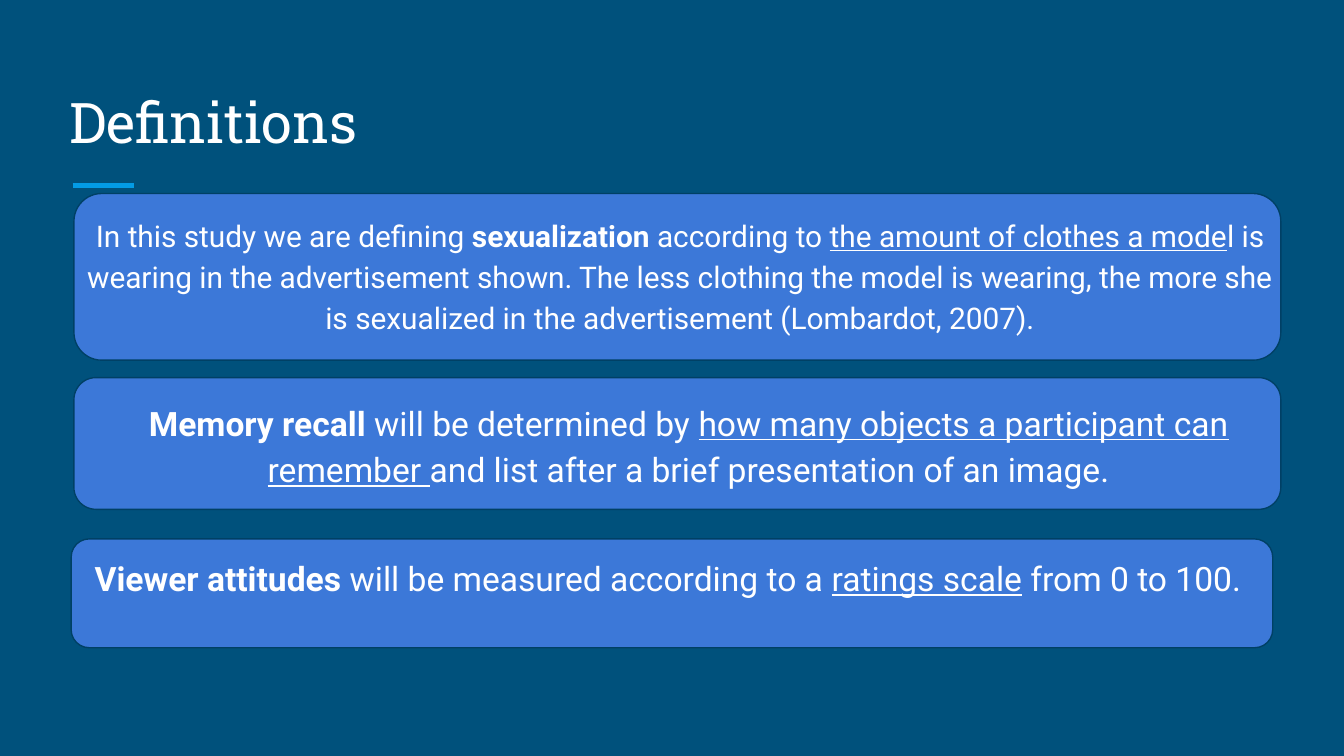
from pptx import Presentation
from pptx.dml.color import RGBColor
from pptx.enum.shapes import MSO_CONNECTOR, MSO_SHAPE
from pptx.enum.text import MSO_ANCHOR, PP_ALIGN
from pptx.oxml.ns import qn
from pptx.util import Inches, Pt
from lxml import etree

CARD = MSO_SHAPE.FLOWCHART_ALTERNATE_PROCESS
LINE = MSO_CONNECTOR.STRAIGHT
TOP, BASE = MSO_ANCHOR.TOP, MSO_ANCHOR.BOTTOM
LEFT, MID = PP_ALIGN.LEFT, PP_ALIGN.CENTER

# Content: each run is (text, style), "b" bold, "u" underlined
TITLE = [("Definitions", "")]
TERMS = [
    {"card": (0.55, 1.44, 8.98, 1.24), "text": (0.55, 1.48, 9.02, 0.9), "size": "small",
     "runs": [("In this study we are defining ", ""), ("sexualization", "b"),
              (" according to ", ""), ("the amount of clothes a mode", "u"),
              ("l is wearing in the advertisement shown. The less clothing the model "
               "is wearing, the more she is sexualized in the advertisement "
               "(Lombardot, 2007).", "")]},
    {"card": (0.55, 2.81, 8.98, 0.98), "text": (0.55, 2.85, 9.15, 0.98), "size": "body",
     "runs": [("Memory recall", "b"), (" will be determined by ", ""),
              ("how many objects a participant can remember ", "u"),
              ("and list after a brief presentation of an image.", "")]},
    {"card": (0.53, 4.01, 8.94, 0.81), "text": (0.49, 4.01, 9.02, 0.46), "size": "body",
     "runs": [("Viewer attitudes", "b"), (" will be measured according to a ", ""),
              ("ratings scale", "u"), (" from 0 to 100. ", "")]},
]

THEME = {
    "back": RGBColor.from_string("00517C"),
    "rule": RGBColor.from_string("039BE5"),
    "card": RGBColor.from_string("3C78D8"),
    "edge": RGBColor.from_string("004065"),
    "ink": RGBColor.from_string("FFFFFF"),
    "head": "Roboto Slab", "font": "Roboto",
    "title": Pt(30), "body": Pt(18), "small": Pt(16),
}


def add_text(slide, box, runs, size, face, align=LEFT, anchor=TOP):
    frame = slide.shapes.add_textbox(*map(Inches, box)).text_frame
    frame.word_wrap = True
    frame.vertical_anchor = anchor
    frame.margin_left = frame.margin_right = Inches(0.1)
    frame.margin_top = frame.margin_bottom = Inches(0.1)
    para = frame.paragraphs[0]
    para.alignment = align
    para.font.size, para.font.name = THEME[size], THEME[face]
    para.font.color.rgb = THEME["ink"]
    for text, style in runs:
        run = para.add_run()
        run.text = text
        if style == "b":
            run.font.bold = True
        elif style == "u":
            run.font.underline = True
    return para


def add_card(slide, box):
    card = slide.shapes.add_shape(CARD, *map(Inches, box))
    card.shadow.inherit = False
    card.fill.solid()
    card.fill.fore_color.rgb = THEME["card"]
    card.line.color.rgb = THEME["edge"]
    card.line.width = Pt(0.75)


def add_rule(slide, left, right, y):
    rule = slide.shapes.add_connector(LINE, *map(Inches, (left, y, right, y)))
    rule.line.color.rgb = THEME["rule"]
    rule.line.width = Pt(3)
    etree.SubElement(rule._element.spPr, qn("a:effectLst"))


def main():
    deck = Presentation()
    deck.slide_width = Inches(10)
    deck.slide_height = deck.slide_width * 9 // 16
    slide = deck.slides.add_slide(deck.slide_layouts[6])
    slide.background.fill.solid()
    slide.background.fill.fore_color.rgb = THEME["back"]

    # Heading and its accent
    add_rule(slide, 0.54, 1, 1.38)
    add_text(slide, (0.42, 0.5, 9.15, 0.75), TITLE, "title", "head", anchor=BASE)

    # One card per term
    for term in TERMS:
        add_card(slide, term["card"])
        para = add_text(slide, term["text"], term["runs"], term["size"], "font", MID)
        para.line_spacing = 1.15
        para.space_after = Pt(16)

    deck.save("out.pptx")


if __name__ == "__main__":
    main()
